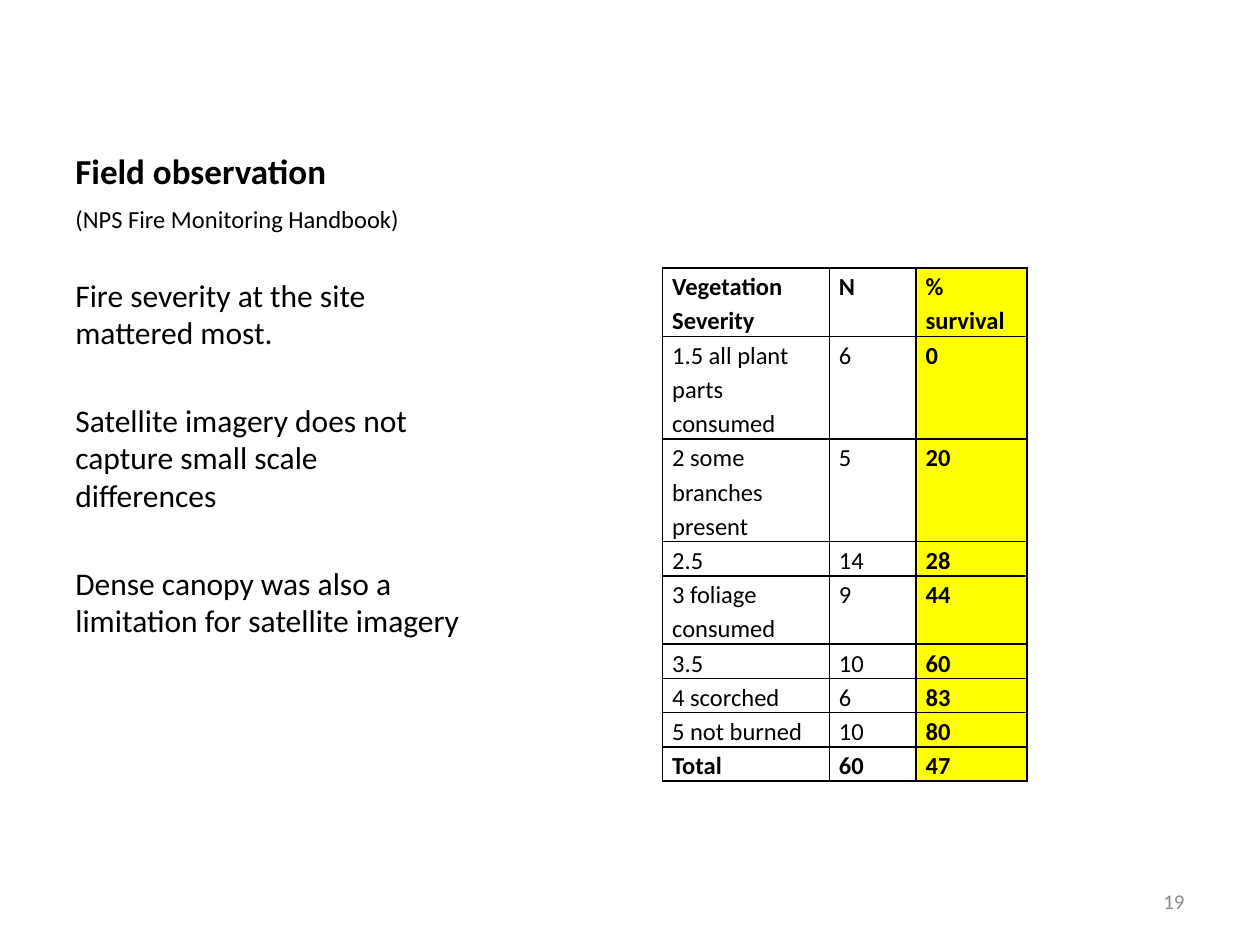
from dataclasses import dataclass

from lxml.etree import SubElement
from pptx import Presentation
from pptx.dml.color import RGBColor
from pptx.enum.text import MSO_ANCHOR, PP_ALIGN
from pptx.oxml.ns import qn
from pptx.util import Cm, Pt


@dataclass(frozen=True)
class Theme:
    font: str = "Calibri"
    ink: str = "000000"
    muted: str = "8C8C8C"
    highlight: str = "FFFF00"
    title: int = 20
    body: int = 18
    small: int = 14
    number: int = 12


THEME = Theme()

# Content
TITLE = "Field observation"
NOTES = [  # text, size, space before in points
    ("(NPS Fire Monitoring Handbook)", THEME.small, 0),
    ("Fire severity at the site mattered most.", THEME.body, 24),
    ("Satellite imagery does not capture small scale differences", THEME.body, 28.3),
    ("Dense canopy was also a limitation for satellite imagery", THEME.body, 28.3),
]
PAGE = "19"
SURVIVAL = [  # severity, N, % survival, lines of text in the row
    ("Vegetation Severity", "N", "% survival", 2),
    ("1.5 all plant parts consumed", "6", "0", 3),
    ("2 some branches present", "5", "20", 3),
    ("2.5", "14", "28", 1),
    ("3 foliage consumed", "9", "44", 2),
    ("3.5", "10", "60", 1),
    ("4 scorched", "6", "83", 1),
    ("5 not burned", "10", "80", 1),
    ("Total", "60", "47", 1),
]

# Layout in centimetres
LEFT, TEXT_W = 1.27, 8.36
TITLE_TOP, TITLE_H = 0.76, 3.23
BODY_H = 13.03
TABLE_LEFT, TABLE_TOP = 13.36, 5.4
COL_WIDTHS = [3.36, 1.75, 2.23]
LINE_H = 0.69


def style(p, size, color=THEME.ink, bold=False):
    p.font.name = THEME.font
    p.font.size = Pt(size)
    p.font.bold = bold
    p.font.color.rgb = RGBColor.from_string(color)


def add_text(slide, box, anchor=MSO_ANCHOR.TOP):
    tf = slide.shapes.add_textbox(*(Cm(v) for v in box)).text_frame
    tf.word_wrap = True
    tf.vertical_anchor = anchor
    return tf


def add_borders(cell):
    tcPr = cell._tc.get_or_add_tcPr()
    for index, side in enumerate(("a:lnL", "a:lnR", "a:lnT", "a:lnB")):
        ln = SubElement(tcPr, qn(side), w=str(Pt(1)))
        tcPr.insert(index, ln)  # borders come before the fill
        fill = SubElement(ln, qn("a:solidFill"))
        SubElement(fill, qn("a:srgbClr"), val=THEME.ink)


def fill_cell(cell, text, bold, highlighted):
    cell.margin_left = cell.margin_right = Cm(0.19)
    cell.margin_top = cell.margin_bottom = 0
    if highlighted:
        cell.fill.solid()
        cell.fill.fore_color.rgb = RGBColor.from_string(THEME.highlight)
    else:
        cell.fill.background()
    add_borders(cell)
    p = cell.text_frame.paragraphs[0]
    p.text = text
    p.line_spacing = 1.15
    style(p, THEME.small, bold=bold)


def add_survival_table(slide):
    frame = slide.shapes.add_table(
        len(SURVIVAL), len(COL_WIDTHS), Cm(TABLE_LEFT), Cm(TABLE_TOP),
        Cm(sum(COL_WIDTHS)), Cm(LINE_H * sum(row[-1] for row in SURVIVAL)))
    table = frame.table
    for col, width in zip(table.columns, COL_WIDTHS):
        col.width = Cm(width)
    last_row, last_col = len(SURVIVAL) - 1, len(COL_WIDTHS) - 1
    for r, (*texts, lines) in enumerate(SURVIVAL):
        table.rows[r].height = Cm(LINE_H * lines)
        for c, text in enumerate(texts):
            bold = r in (0, last_row) or c == last_col
            fill_cell(table.cell(r, c), text, bold, c == last_col)


def main():
    prs = Presentation()
    prs.slide_width, prs.slide_height = Cm(25.4), Cm(19.05)
    slide = prs.slides.add_slide(prs.slide_layouts[6])

    # Title
    tf = add_text(slide, (LEFT, TITLE_TOP, TEXT_W, TITLE_H), MSO_ANCHOR.BOTTOM)
    p = tf.paragraphs[0]
    p.text = TITLE
    style(p, THEME.title, bold=True)

    # Notes
    tf = add_text(slide, (LEFT, TITLE_TOP + TITLE_H, TEXT_W, BODY_H))
    for i, (text, size, gap) in enumerate(NOTES):
        p = tf.add_paragraph() if i else tf.paragraphs[0]
        p.text = text
        if gap:
            p.space_before = Pt(gap)
        style(p, size)

    # Page number
    tf = add_text(slide, (18.21, 17.65, 5.92, 1.02), MSO_ANCHOR.MIDDLE)
    p = tf.paragraphs[0]
    p.text = PAGE
    p.alignment = PP_ALIGN.RIGHT
    style(p, THEME.number, THEME.muted)

    # Survival by severity
    add_survival_table(slide)

    prs.save("out.pptx")


if __name__ == "__main__":
    main()
